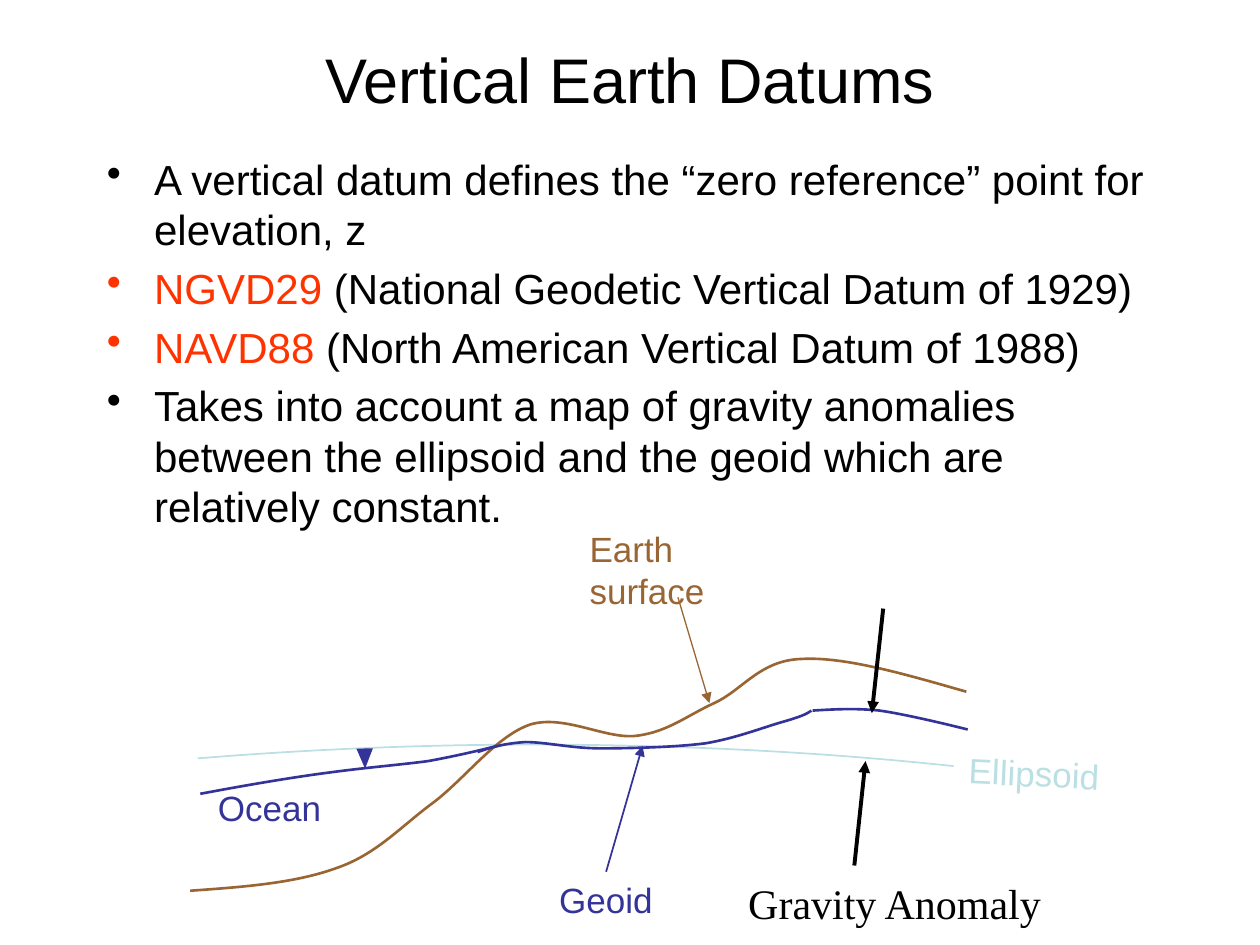
import pptx
import pptx.dml.color
import pptx.enum.shapes
import pptx.enum.text
import pptx.oxml.ns
import pptx.oxml.xmlchemy
import pptx.util
from dataclasses import dataclass

Pt = pptx.util.Pt
qn = pptx.oxml.ns.qn
new_element = pptx.oxml.xmlchemy.OxmlElement
MSO_SHAPE = pptx.enum.shapes.MSO_SHAPE
ANCHOR = pptx.enum.text.MSO_ANCHOR
ALIGN = pptx.enum.text.PP_ALIGN


@dataclass(frozen=True)
class Theme:
    ink: str = "000000"
    datum: str = "FF3300"
    earth: str = "996633"
    geoid: str = "333399"
    ellipsoid: str = "BBE0E3"
    sans: str = "Arial"
    serif: str = "Times New Roman"
    title: int = 36
    body: int = 24
    label: int = 20


THEME = Theme()

BULLETS = [
    [("A vertical datum defines the “zero reference” point for elevation, z", THEME.ink)],
    [("NGVD29", THEME.datum), (" (National Geodetic Vertical Datum of 1929)", THEME.ink)],
    [("NAVD88", THEME.datum), (" (North American Vertical Datum of 1988)", THEME.ink)],
    [("Takes into account a map of gravity anomalies between the ellipsoid "
      "and the geoid which are relatively constant.", THEME.ink)],
]

# Each curve: colour, line width, start point followed by triples of Bezier points
CURVES = [
    (THEME.ellipsoid, 1, [
        (5, 145.4), (66.2, 140.4), (131, 137.5), (195.8, 137.5),
        (280, 137.5), (362.2, 141.8), (437, 149.8)]),
    (THEME.earth, 1.5, [
        (0.7, 221), (31, 218.9), (60.5, 216.7), (84.2, 208.1),
        (107.3, 200.2), (121, 184.3), (139.7, 170.6),
        (157.7, 157), (175.7, 132.5), (195.1, 126),
        (214.6, 120.2), (238.3, 134.6), (255.6, 132.5),
        (273.6, 130.3), (284.4, 121), (300.2, 113.8),
        (316.1, 106.6), (326.2, 89.3), (349.9, 88.6),
        (374.4, 87.1), (409, 97.2), (444.2, 107.3)]),
    (THEME.geoid, 1.5, [
        (356.4, 118.1), (367.9, 117.4), (380.2, 116.6), (394.6, 118.1),
        (409.7, 120.2), (436.3, 126.7), (445, 128.9)]),
    (THEME.geoid, 1.5, [
        (164.9, 141.8), (172.8, 139), (180.7, 136.8), (192.2, 136.1),
        (204.5, 136.1), (218.2, 139.7), (235.4, 139.7),
        (252.7, 139.7), (277.9, 139), (295.2, 136.8),
        (312.5, 133.9), (329, 127.4), (339.1, 124.6),
        (349.2, 121.7), (352.8, 120.2), (355.7, 118.1)]),
    (THEME.geoid, 1.5, [
        (6.5, 165.6), (33.1, 160.6), (59, 156.2), (80.6, 153.4),
        (102.2, 150.5), (121, 149), (136.8, 146.9),
        (152.6, 144), (164.9, 141.1), (176.4, 138.2)]),
]

# Each label: box, colour, font, size, wrap, rotation
LABELS = {
    "Ocean": ((9.4, 157.7, 73.4, 31), THEME.geoid, THEME.sans, THEME.label, False, 0),
    "Geoid": ((204.5, 210.2, 67.7, 31), THEME.geoid, THEME.sans, THEME.label, False, 0),
    "Earth surface": ((221.8, 10.1, 130, 31), THEME.earth, THEME.sans, THEME.label, True, 0),
    "Ellipsoid": ((438.5, 138.2, 89.3, 31), THEME.ellipsoid, THEME.sans, THEME.label, False, 2.8),
    "Gravity Anomaly": ((312.5, 210.2, 182.9, 36), THEME.ink, THEME.serif, THEME.body, False, 0),
}

# Each arrow: start, tip, colour, line width, label it starts from
ARROWS = [
    ((238.3, 210.2), (259.2, 138.2), THEME.geoid, 1, "Geoid"),
    ((279.4, 53.3), (297.4, 113.8), THEME.earth, 0.75, None),
    ((396.7, 59.8), (390.2, 119.5), THEME.ink, 2.25, None),
    ((380.2, 206.6), (386.6, 146.9), THEME.ink, 2.25, None),
]


def rgb(value):
    return pptx.dml.color.RGBColor.from_string(value)


def apply(target, formats):
    for name, value in formats.items():
        setattr(target, name, value)


def add_run(paragraph, text, color, font, size):
    run = paragraph.add_run()
    run.text = text
    apply(run.font, {"name": font, "size": Pt(size)})
    run.font.color.rgb = rgb(color)


def add_frame(slide, box, **formats):
    holder = slide.shapes.add_textbox(*map(Pt, box))
    apply(holder.text_frame, {"word_wrap": True, **formats})
    return holder


def add_title(slide, box):
    frame = add_frame(slide, box, vertical_anchor=ANCHOR.MIDDLE).text_frame
    frame.paragraphs[0].alignment = ALIGN.CENTER
    add_run(frame.paragraphs[0], "Vertical Earth Datums", THEME.ink, THEME.sans, THEME.title)


def add_bullets(slide, box):
    frame = add_frame(slide, box).text_frame
    for index, parts in enumerate(BULLETS):
        paragraph = frame.add_paragraph() if index else frame.paragraphs[0]
        paragraph.space_before = Pt(0.2 * THEME.body)
        properties = paragraph._p.get_or_add_pPr()
        properties.set("marL", str(int(Pt(27))))
        properties.set("indent", str(-int(Pt(27))))
        bullet = new_element("a:buChar")
        bullet.set("char", "•")
        properties.append(bullet)
        for text, color in parts:
            add_run(paragraph, text, color, THEME.sans, THEME.body)


def add_curve(slide, points, color, width):
    start, *rest = [(Pt(x), Pt(y)) for x, y in points]
    builder = slide.shapes.build_freeform(*start)
    builder.add_line_segments(rest, close=False)
    curve = builder.convert_to_shape()
    curve.shadow.inherit = False
    curve.fill.background()
    curve.line.width = Pt(width)
    curve.line.color.rgb = rgb(color)
    # Group the segment points by three into Bezier segments
    outline = next(curve._element.iter(qn("a:path")))
    segments = outline.findall(qn("a:lnTo"))
    for first in range(0, len(segments), 3):
        bezier = new_element("a:cubicBezTo")
        outline.append(bezier)
        for segment in segments[first:first + 3]:
            bezier.append(segment[0])
            outline.remove(segment)


def add_arrow(slide, start, tip, color, width, source):
    arrow = slide.shapes.add_connector(
        pptx.enum.shapes.MSO_CONNECTOR.STRAIGHT, *map(Pt, (*start, *tip)))
    if source is not None:
        arrow.begin_connect(source, 0)
    arrow.line.width = Pt(width)
    arrow.line.color.rgb = rgb(color)
    head = new_element("a:tailEnd")
    head.set("type", "triangle")
    arrow._element.spPr.find(qn("a:ln")).append(head)
    arrow._element.spPr.append(new_element("a:effectLst"))


def add_datum_diagram(slide, box):
    left, top = box[:2]

    def place(point):
        return left + point[0], top + point[1]

    # Ellipsoid, earth surface and geoid
    for color, width, points in CURVES:
        add_curve(slide, [place(point) for point in points], color, width)

    # Water level mark
    water_mark = slide.shapes.add_shape(
        MSO_SHAPE.ISOSCELES_TRIANGLE, *map(Pt, (*place((95.8, 139.7)), 9.4, 11.5)))
    water_mark.rotation = 178.8
    water_mark.shadow.inherit = False
    water_mark.fill.solid()
    water_mark.fill.fore_color.rgb = rgb(THEME.geoid)
    water_mark.line.fill.background()

    # Labels
    holders = {}
    for text, (area, color, font, size, wrap, turn) in LABELS.items():
        holder = add_frame(slide, (*place(area), *area[2:]), word_wrap=wrap)
        holder.rotation = turn
        add_run(holder.text_frame.paragraphs[0], text, color, font, size)
        holders[text] = holder

    # Pointers and gravity anomaly arrows
    for start, tip, color, width, source in ARROWS:
        add_arrow(slide, place(start), place(tip), color, width, holders.get(source))


def main():
    deck = pptx.Presentation()
    apply(deck, {"slide_width": Pt(720), "slide_height": Pt(540)})
    slide = deck.slides.add_slide(deck.slide_layouts[6])
    add_title(slide, (36, 0, 648, 90))
    add_bullets(slide, (54, 84, 612, 360))
    add_datum_diagram(slide, (108, 288, 528, 247))
    deck.save("out.pptx")


if __name__ == "__main__":
    main()
